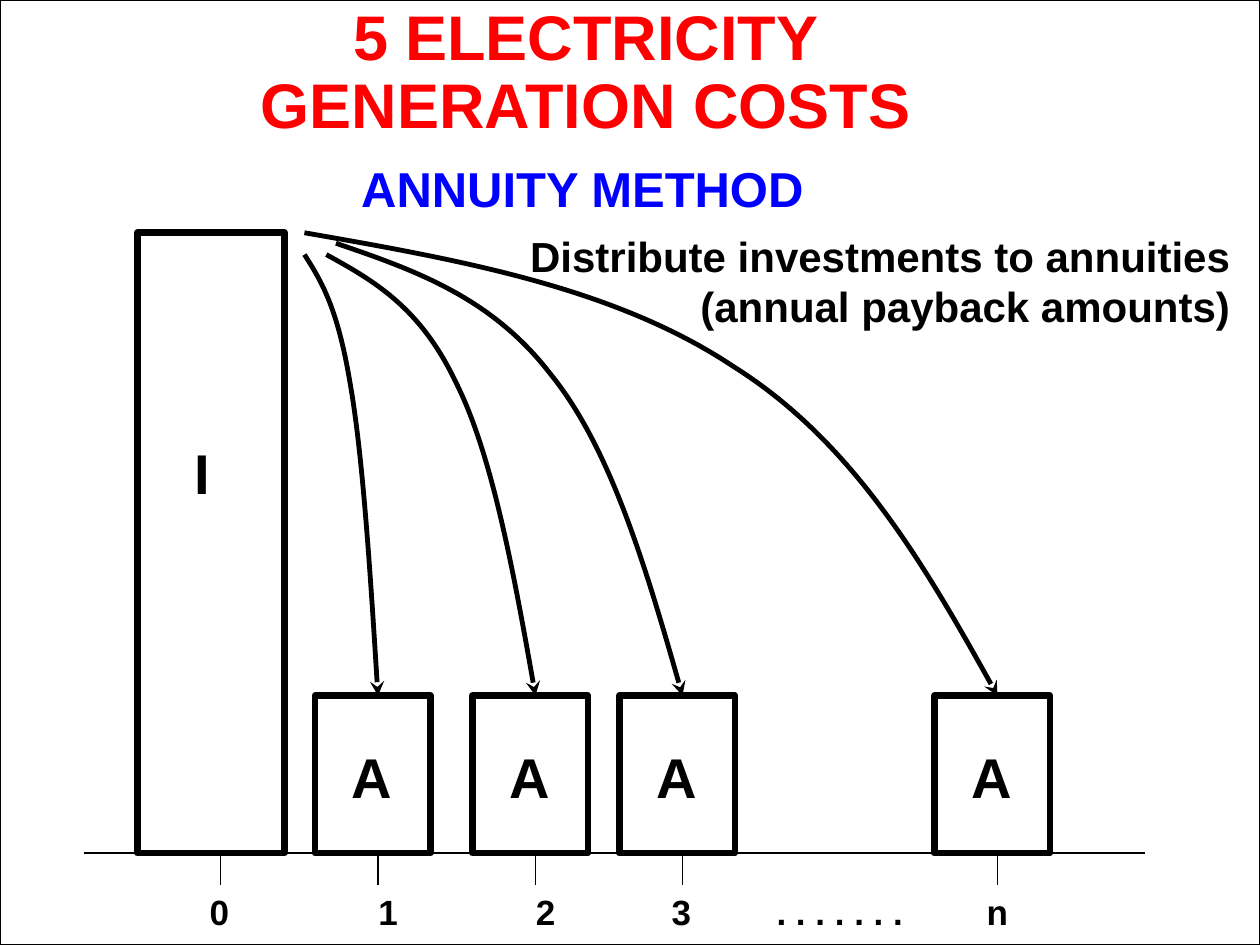
from dataclasses import dataclass

from lxml.etree import SubElement
from pptx import Presentation
from pptx.dml.color import RGBColor
from pptx.enum.shapes import MSO_CONNECTOR as Connector, MSO_SHAPE as Shape
from pptx.enum.text import MSO_ANCHOR as Anchor, MSO_AUTO_SIZE as AutoSize, PP_ALIGN as Align
from pptx.oxml.ns import qn
from pptx.util import Pt


@dataclass(frozen=True)
class Theme:
    font: str = "Arial"
    ink: RGBColor = RGBColor(0, 0, 0)
    paper: RGBColor = RGBColor(255, 255, 255)
    title: RGBColor = RGBColor(255, 0, 0)
    method: RGBColor = RGBColor(0, 0, 255)
    title_size: float = 36
    method_size: float = 28
    amount_size: float = 32
    remark_size: float = 24
    year_size: float = 20
    thin: float = 0.75
    arrow: float = 2.75
    bar: float = 3.75


THEME = Theme()
BASELINE = 487.5
ANNUITY_TOP = 397.5

# Year label, tick position, label offset from the tick
YEARS = [("0", 126, -18), ("1", 216, -11.5), ("2", 306, -11.5),
         ("3", 390, -18), ("n", 570, -18)]
# Where the arrow to each annuity starts
ARROW_STARTS = [(174, 145.5), (186.5, 145.5), (192, 139), (174, 133)]
# Bezier points of an arrow, as shares of its width and height
ARROW_CURVE = [(0.23, 0.06), (0.45, 0.12), (0.62, 0.29),
               (0.79, 0.45), (0.9, 0.73), (1, 1)]


def write(shape, text, size, color=THEME.ink, align=Align.LEFT, leading=None,
          left=0, top=3.6, right=0):
    frame = shape.text_frame
    frame.word_wrap = True
    frame.auto_size = AutoSize.NONE
    frame.vertical_anchor = Anchor.TOP
    frame.margin_left, frame.margin_top = Pt(left), Pt(top)
    frame.margin_right, frame.margin_bottom = Pt(right), Pt(0)
    frame.text = text
    paragraph = frame.paragraphs[0]
    paragraph.alignment = align
    paragraph.line_spacing = Pt(leading or 1.2 * size)
    for run in paragraph.runs:
        run.font.name, run.font.size = THEME.font, Pt(size)
        run.font.bold = True
        run.font.color.rgb = color


def add_text(slide, box, text, size, **style):
    write(slide.shapes.add_textbox(*map(Pt, box)), text, size, **style)


def add_label(slide, box, text, size):
    add_text(slide, box, text, size, left=7.2 + 0.23 * size)


def set_line(shape, width):
    shape.line.color.rgb = THEME.ink
    shape.line.width = Pt(width)


def add_box(slide, box, width, fill=None):
    rectangle = slide.shapes.add_shape(Shape.RECTANGLE, *map(Pt, box))
    rectangle.shadow.inherit = False
    if fill is None:
        rectangle.fill.background()
    else:
        rectangle.fill.solid()
        rectangle.fill.fore_color.rgb = fill
    set_line(rectangle, width)
    return rectangle


def add_line(slide, start, end):
    line = slide.shapes.add_connector(Connector.STRAIGHT, *map(Pt, (*start, *end)))
    set_line(line, THEME.thin)
    SubElement(line.element.spPr, qn("a:effectLst"))


def add_curved_arrow(slide, start, end):
    width, height = end[0] - start[0], end[1] - start[1]
    points = [(Pt(start[0] + x * width), Pt(start[1] + y * height))
              for x, y in ARROW_CURVE]
    builder = slide.shapes.build_freeform(Pt(start[0]), Pt(start[1]))
    builder.add_line_segments(points, close=False)
    arrow = builder.convert_to_shape()
    arrow.shadow.inherit = False
    arrow.fill.background()
    set_line(arrow, THEME.arrow)
    line = arrow.element.spPr.find(qn("a:ln"))
    SubElement(line, qn("a:tailEnd"), type="stealth")

    # Every three points make one Bezier segment
    outline = arrow.element.find(".//" + qn("a:path"))
    steps = outline.findall(qn("a:lnTo"))
    for first in range(0, len(steps), 3):
        curve = SubElement(outline, qn("a:cubicBezTo"))
        for step in steps[first:first + 3]:
            curve.append(step[0])
            outline.remove(step)


def main():
    deck = Presentation()
    deck.slide_width, deck.slide_height = Pt(720), Pt(540)
    slide = deck.slides.add_slide(deck.slide_layouts[5])

    # Page frame behind everything
    page = add_box(slide, (0, 0, 720, 540), THEME.thin, THEME.paper)
    title = slide.shapes.title
    title.element.addprevious(page.element)

    # Time axis and investment
    add_line(slide, (48, BASELINE), (654.5, BASELINE))
    add_box(slide, (78.5, 133, 84, BASELINE - 133), THEME.bar)
    add_label(slide, (96.5, 247, 32.5, 45.5), "I", THEME.amount_size)

    # Years
    for year, tick, offset in YEARS:
        add_line(slide, (tick, BASELINE), (tick, BASELINE + 18))
        add_label(slide, (tick + offset, 505.5, 32, 31), year, THEME.year_size)
    add_label(slide, (432, 505.5, 91.5, 31), ". . . . . . .", THEME.year_size)

    # Annuities, each with its arrow from the investment
    for (_, tick, _), start in zip(YEARS[1:], ARROW_STARTS):
        add_box(slide, (tick - 36, ANNUITY_TOP, 66, BASELINE - ANNUITY_TOP), THEME.bar)
        add_label(slide, (tick - 29.5, 421, 47, 45.5), "A", THEME.amount_size)
        add_curved_arrow(slide, start, (tick, ANNUITY_TOP))

    # Headings and remark
    add_text(slide, (296, 128, 421, 65),
             "Distribute investments to annuities\v(annual payback amounts)",
             THEME.remark_size, align=Align.RIGHT, right=14)
    add_text(slide, (198.5, 60.5, 279.5, 70), "ANNUITY METHOD", THEME.method_size,
             color=THEME.method, align=Align.CENTER, leading=60, right=11)
    title.left, title.top, title.width, title.height = map(Pt, (140.5, 3.6, 399.5, 80))
    write(title, "5 ELECTRICITY\vGENERATION COSTS", THEME.title_size,
          color=THEME.title, align=Align.CENTER, leading=38.4, top=0, right=11)

    deck.save("out.pptx")


if __name__ == "__main__":
    main()
